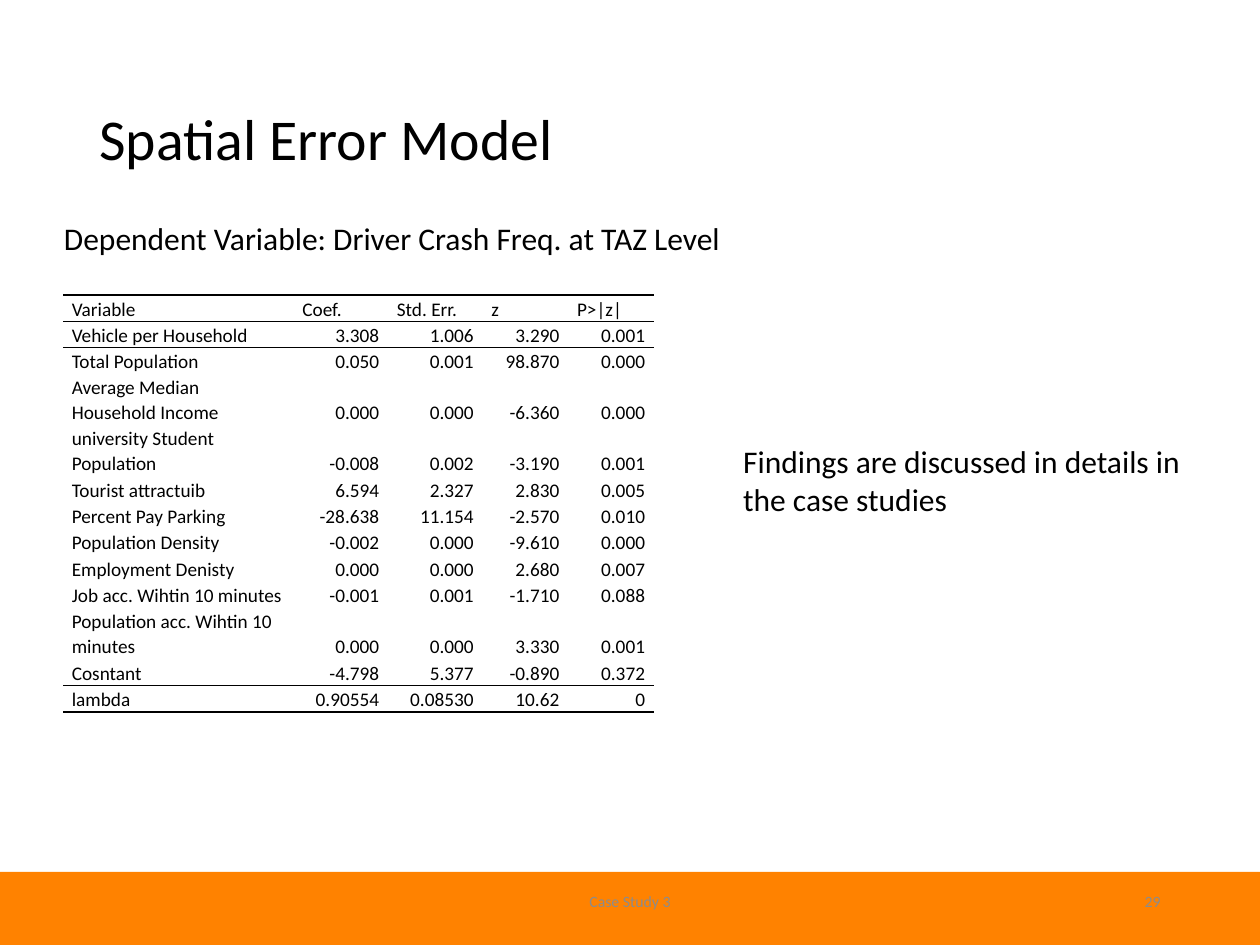
from lxml import etree
from pptx import Presentation
from pptx.dml.color import RGBColor
from pptx.enum.shapes import MSO_SHAPE
from pptx.enum.text import MSO_ANCHOR, PP_ALIGN
from pptx.oxml.ns import qn
from pptx.util import Inches, Pt

LEFT, CENTER, RIGHT = PP_ALIGN.LEFT, PP_ALIGN.CENTER, PP_ALIGN.RIGHT
TOP, MIDDLE, BOTTOM = MSO_ANCHOR.TOP, MSO_ANCHOR.MIDDLE, MSO_ANCHOR.BOTTOM
RECTANGLE = MSO_SHAPE.RECTANGLE

FONT = "Calibri"
COLORS = {"text": "000000", "footer": "8C8C8C", "band": "FF8200"}
NO_STYLE_NO_GRID = "{2D5ABB26-0587-4C30-8999-92F81FD0307C}"

# text, (left, top, width, height), size, color, alignment, anchor, line spacing
TEXTS = [
    ("Spatial Error Model", (0.69, 0.4, 8.62, 1.45), 33, "text", LEFT, MIDDLE, 0.9),
    ("Case Study 3", (3.31, 6.95, 3.38, 0.4), 9, "footer", CENTER, MIDDLE, 1.0),
    ("29", (7.06, 6.95, 2.25, 0.4), 9, "footer", RIGHT, MIDDLE, 1.0),
    ("Findings are discussed in details in the case studies",
     (5.8, 3.46, 3.7, 0.71), 18, "text", LEFT, TOP, 1.0),
    ("Dependent Variable: Driver Crash Freq. at TAZ Level",
     (0.41, 1.69, 5.7, 0.4), 18, "text", LEFT, TOP, 1.0),
]

ESTIMATES = [
    ("Variable", "Coef.", "Std. Err.", "z", "P>|z|"),
    ("Vehicle per Household", "3.308", "1.006", "3.290", "0.001"),
    ("Total Population", "0.050", "0.001", "98.870", "0.000"),
    ("Average Median Household Income", "0.000", "0.000", "-6.360", "0.000"),
    ("university Student Population", "-0.008", "0.002", "-3.190", "0.001"),
    ("Tourist attractuib", "6.594", "2.327", "2.830", "0.005"),
    ("Percent Pay Parking", "-28.638", "11.154", "-2.570", "0.010"),
    ("Population Density", "-0.002", "0.000", "-9.610", "0.000"),
    ("Employment Denisty", "0.000", "0.000", "2.680", "0.007"),
    ("Job acc. Wihtin 10 minutes", "-0.001", "0.001", "-1.710", "0.088"),
    ("Population acc. Wihtin 10 minutes", "0.000", "0.000", "3.330", "0.001"),
    ("Cosntant", "-4.798", "5.377", "-0.890", "0.372"),
    ("lambda", "0.90554", "0.08530", "10.62", "0"),
]
COLUMN_WIDTHS = [1.83, 0.75, 0.75, 0.68, 0.68]
ROW_HEIGHT = 0.21
LAST_ROW = len(ESTIMATES) - 1
RULES_ABOVE = {0, 1, LAST_ROW}
RULES_BELOW = {0, LAST_ROW - 1, LAST_ROW}


def format_paragraph(para, size, color, alignment, spacing):
    para.alignment = alignment
    para.line_spacing = spacing
    for span in para.runs:
        span.font.name = FONT
        span.font.size = Pt(size)
        span.font.color.rgb = RGBColor.from_string(COLORS[color])


def add_text(slide, text, place, size, color, alignment, anchor, spacing):
    box = slide.shapes.add_textbox(*map(Inches, place))
    frame = box.text_frame
    frame.word_wrap = True
    frame.vertical_anchor = anchor
    frame.text = text
    format_paragraph(frame.paragraphs[0], size, color, alignment, spacing)


def add_rules(cell, sides):
    """Draw 1 pt cell borders; sides are lnT and lnB, in that order."""
    properties = cell._tc.get_or_add_tcPr()
    for position, side in enumerate(sides):
        line = etree.Element(qn(f"a:{side}"), w=str(Pt(1)))
        fill = etree.SubElement(line, qn("a:solidFill"))
        etree.SubElement(fill, qn("a:srgbClr"), val=COLORS["text"])
        properties.insert(position, line)


def add_estimates(slide):
    frame = slide.shapes.add_table(
        len(ESTIMATES), len(COLUMN_WIDTHS), Inches(0.5), Inches(2.34),
        Inches(sum(COLUMN_WIDTHS)), Inches(ROW_HEIGHT * len(ESTIMATES)))
    table = frame.table
    table.first_row = table.horz_banding = False
    table._tbl.tblPr.find(qn("a:tableStyleId")).text = NO_STYLE_NO_GRID
    for column, width in zip(table.columns, COLUMN_WIDTHS):
        column.width = Inches(width)
    for r, values in enumerate(ESTIMATES):
        table.rows[r].height = Inches(ROW_HEIGHT)
        sides = [side for side, rows in (("lnT", RULES_ABOVE), ("lnB", RULES_BELOW))
                 if r in rows]
        for c, value in enumerate(values):
            cell = table.cell(r, c)
            cell.text = value
            cell.fill.background()
            cell.vertical_anchor = BOTTOM
            cell.margin_left = cell.margin_right = Inches(0.07)
            cell.margin_top = cell.margin_bottom = 0
            alignment = RIGHT if r and c else LEFT
            format_paragraph(cell.text_frame.paragraphs[0], 11, "text", alignment, 1.07)
            add_rules(cell, sides)


def main():
    deck = Presentation()
    deck.slide_width, deck.slide_height = Inches(10), Inches(7.5)
    slide = deck.slides.add_slide(deck.slide_layouts[6])

    band = slide.shapes.add_shape(
        RECTANGLE, 0, Inches(6.92), Inches(10), Inches(0.58))
    band.shadow.inherit = False
    band.fill.solid()
    band.fill.fore_color.rgb = RGBColor.from_string(COLORS["band"])
    band.line.fill.background()

    add_estimates(slide)
    for text in TEXTS:
        add_text(slide, *text)
    deck.save("out.pptx")


if __name__ == "__main__":
    main()
